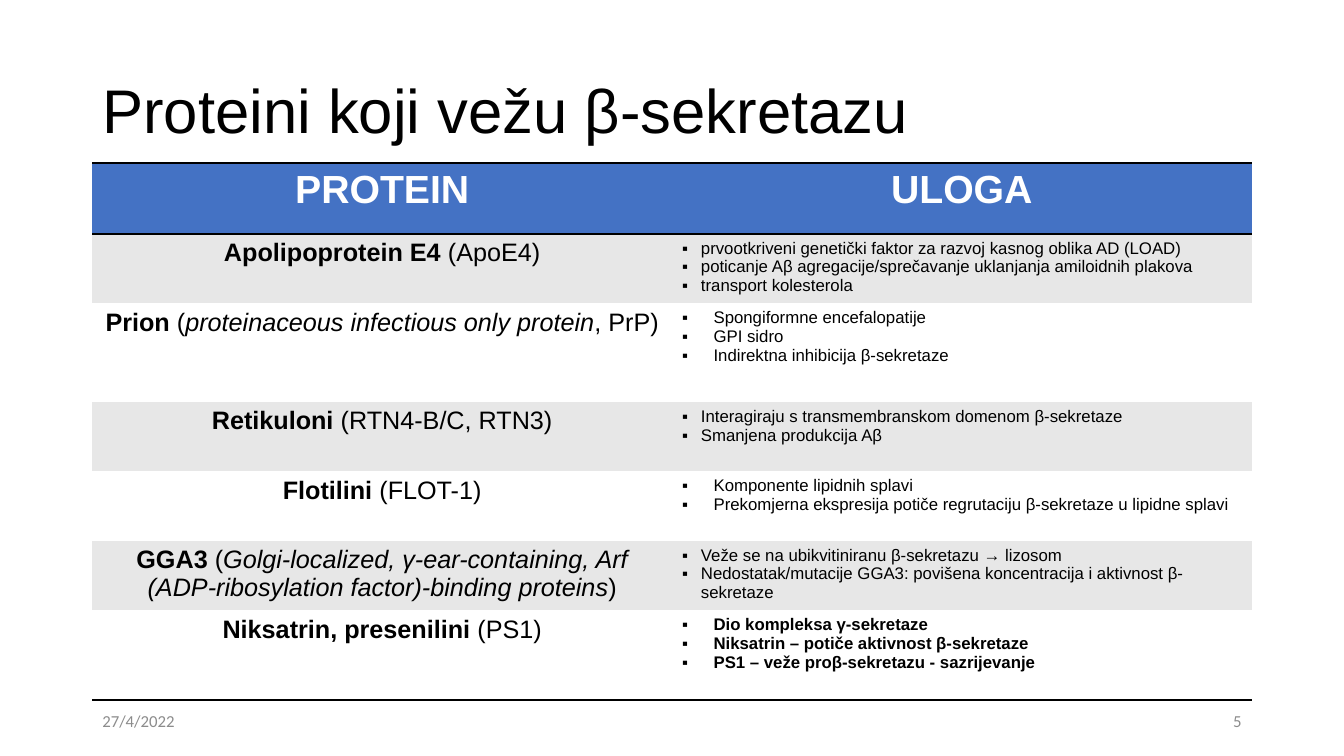
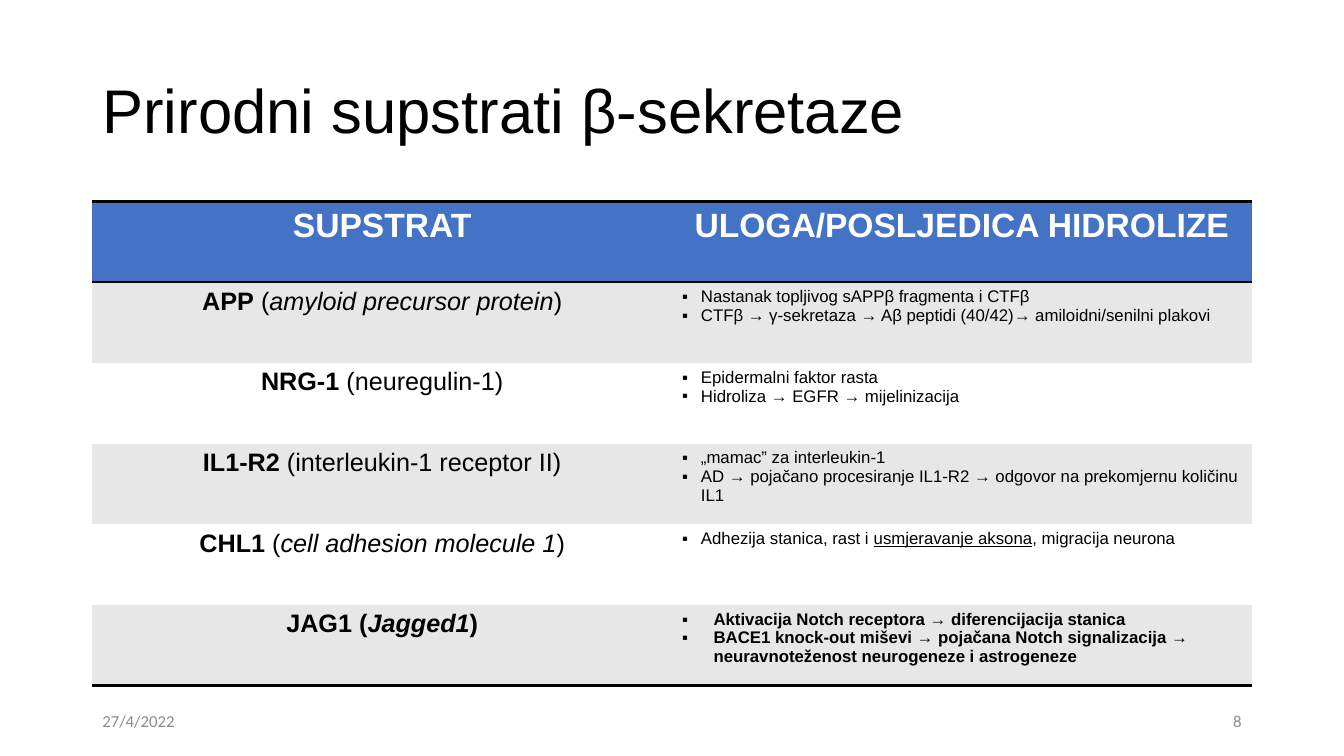
from dataclasses import dataclass
from typing import NamedTuple

from lxml import etree
from pptx import Presentation
from pptx import util as u
from pptx.dml import color
from pptx.enum import text
from pptx.oxml import ns

SLIDE_WIDTH, SLIDE_HEIGHT = 960, 540
MARGIN, CONTENT_WIDTH = 66, 828
TITLE_TOP, TITLE_HEIGHT = 28.8, 104.4
FOOTER_TOP, FOOTER_WIDTH, FOOTER_HEIGHT = 500.4, 216, 28.8
BLACK, WHITE, BLUE, BAND, GREY = "000000", "FFFFFF", "4472C4", "E7E7E7", "8C8C8C"
NARROW, WIDE = 13.5, 22.5
RULE_WIDTH = 2
DATE = "27/4/2022"
LEFT, CENTER, RIGHT = text.PP_ALIGN.LEFT, text.PP_ALIGN.CENTER, text.PP_ALIGN.RIGHT


class Span(NamedTuple):
    text: str
    bold: bool = False
    italic: bool = False
    underline: bool = False


Line = tuple[Span, ...]


@dataclass(frozen=True)
class Row:
    name: Line
    notes: tuple[Line, ...]
    height: float
    indent: float = NARROW


@dataclass(frozen=True)
class TablePage:
    title: str
    number: str
    top: float
    header: tuple[str, str]
    header_size: float
    header_height: float
    rows: tuple[Row, ...]


def strong(words: str) -> Span:
    return Span(words, bold=True)


def slanted(words: str) -> Span:
    return Span(words, italic=True)


def lines(*sentences: str, bold: bool = False) -> tuple[Line, ...]:
    return tuple((Span(sentence, bold),) for sentence in sentences)


PAGES = (
    TablePage(
        "Proteini koji vežu β-sekretazu", "5", 116.6, ("PROTEIN", "ULOGA"), 28, 50.4,
        (
            Row((strong("Apolipoprotein E4 "), Span("(ApoE4)")),
                lines("prvootkriveni genetički faktor za razvoj kasnog oblika AD (LOAD)",
                      "poticanje Aβ agregacije/sprečavanje uklanjanja amiloidnih plakova",
                      "transport kolesterola"), 49.6),
            Row((strong("Prion "), Span("("), slanted("proteinaceous infectious only protein"),
                 Span(", PrP)")),
                lines("Spongiformne encefalopatije", "GPI sidro",
                      "Indirektna inhibicija β-sekretaze"), 70.6, WIDE),
            Row((strong("Retikuloni "), Span("(RTN4-B/C, RTN3)")),
                lines("Interagiraju s transmembranskom domenom β-sekretaze",
                      "Smanjena produkcija Aβ"), 49.6),
            Row((strong("Flotilini "), Span("(FLOT-1)")),
                lines("Komponente lipidnih splavi",
                      "Prekomjerna ekspresija potiče regrutaciju β-sekretaze u lipidne splavi"),
                49.6, WIDE),
            Row((strong("GGA3 "), Span("("),
                 slanted("Golgi-localized, γ-ear-containing, Arf "
                         "(ADP-ribosylation factor)-binding proteins"), Span(")")),
                lines("Veže se na ubikvitiniranu β-sekretazu → lizosom",
                      "Nedostatak/mutacije GGA3: povišena koncentracija i aktivnost β-sekretaze"),
                49.6),
            Row((strong("Niksatrin, presenilini "), Span("(PS1)")),
                lines("Dio kompleksa γ-sekretaze", "Niksatrin – potiče aktivnost β-sekretaze",
                      "PS1 – veže proβ-sekretazu - sazrijevanje", bold=True), 64, WIDE),
        ),
    ),
    TablePage(
        "Prirodni supstrati β-sekretaze", "8", 144,
        ("SUPSTRAT", "ULOGA/POSLJEDICA HIDROLIZE"), 24, 57.6,
        (
            Row((strong("APP"), Span(" ("), slanted("amyloid precursor protein"), Span(")")),
                lines("Nastanak topljivog sAPPβ fragmenta i CTFβ",
                      "CTFβ → γ-sekretaza → Aβ peptidi (40/42)→ amiloidni/senilni plakovi"), 57.6),
            Row((strong("NRG-1"), Span(" (neuregulin-1)")),
                lines("Epidermalni faktor rasta", "Hidroliza → EGFR → mijelinizacija"), 57.6),
            Row((strong("IL1-R2"), Span(" (interleukin-1 receptor II)")),
                lines("„mamac” za interleukin-1",
                      "AD → pojačano procesiranje IL1-R2 → odgovor na prekomjernu količinu IL1"),
                57.6),
            Row((strong("CHL1"), Span(" ("), slanted("cell adhesion molecule 1"), Span(")")),
                ((Span("Adhezija stanica, rast i "), Span("usmjeravanje aksona", underline=True),
                  Span(", migracija neurona")),), 57.6),
            Row((strong("JAG1"), strong(" ("), Span("Jagged1", bold=True, italic=True),
                 strong(")")),
                lines("Aktivacija Notch receptora → diferencijacija stanica",
                      "BACE1 knock-out miševi → pojačana Notch signalizacija → "
                      "neuravnoteženost neurogeneze i astrogeneze", bold=True), 57.6, WIDE),
        ),
    ),
)


def rgb(value: str) -> color.RGBColor:
    return color.RGBColor.from_string(value)


def set_font(font, name: str, size: float, ink: str) -> None:
    font.name = name
    font.size = u.Pt(size)
    font.color.rgb = rgb(ink)


def add_bullet(para, indent: float) -> None:
    properties = para._p.get_or_add_pPr()
    properties.set("marL", str(u.Pt(indent)))
    properties.set("indent", str(-u.Pt(indent)))
    etree.SubElement(properties, ns.qn("a:buFont"), typeface="Arial")
    etree.SubElement(properties, ns.qn("a:buChar"), char="▪")


def write_lines(frame, content: tuple[Line, ...], size: float, ink: str = BLACK,
                align=LEFT, name: str = "Arial", indent: float = 0) -> None:
    for index, line in enumerate(content):
        para = frame.add_paragraph() if index else frame.paragraphs[0]
        para.alignment = align
        if indent:
            add_bullet(para, indent)
        set_font(para.font, name, size, ink)
        for span in line:
            run = para.add_run()
            run.text = span.text
            run.font.bold = span.bold
            run.font.italic = span.italic
            run.font.underline = span.underline


def style_cell(cell, fill: str, ruled: str) -> None:
    properties = cell._tc.get_or_add_tcPr()
    for side in "LRTB":
        border = etree.SubElement(properties, ns.qn(f"a:ln{side}"))
        if side in ruled:
            border.set("w", str(u.Pt(RULE_WIDTH)))
            solid = etree.SubElement(border, ns.qn("a:solidFill"))
            etree.SubElement(solid, ns.qn("a:srgbClr"), val=BLACK)
        else:
            border.set("w", "0")
            etree.SubElement(border, ns.qn("a:noFill"))
    cell.fill.solid()
    cell.fill.fore_color.rgb = rgb(fill)


def add_title(page, title: str) -> None:
    box = page.shapes.title
    box.left, box.top = u.Pt(MARGIN), u.Pt(TITLE_TOP)
    box.width, box.height = u.Pt(CONTENT_WIDTH), u.Pt(TITLE_HEIGHT)
    frame = box.text_frame
    frame.auto_size = text.MSO_AUTO_SIZE.NONE
    frame.vertical_anchor = text.MSO_ANCHOR.MIDDLE
    write_lines(frame, lines(title), 44)
    frame.paragraphs[0].line_spacing = 0.9


def add_footer(page, words: str, left: float, align) -> None:
    box = page.shapes.add_textbox(u.Pt(left), u.Pt(FOOTER_TOP),
                                  u.Pt(FOOTER_WIDTH), u.Pt(FOOTER_HEIGHT))
    frame = box.text_frame
    frame.word_wrap = True
    frame.vertical_anchor = text.MSO_ANCHOR.MIDDLE
    write_lines(frame, lines(words), 12, GREY, align, "Calibri")


def add_protein_table(page, content: TablePage) -> None:
    heights = [content.header_height, *(row.height for row in content.rows)]
    table = page.shapes.add_table(len(heights), 2, u.Pt(MARGIN), u.Pt(content.top),
                                  u.Pt(CONTENT_WIDTH), u.Pt(sum(heights))).table
    for table_row, height in zip(table.rows, heights):
        table_row.height = u.Pt(height)
    for column, heading in enumerate(content.header):
        cell = table.cell(0, column)
        style_cell(cell, BLUE, "TB")
        write_lines(cell.text_frame, lines(heading, bold=True),
                    content.header_size, WHITE, CENTER)
    for index, row in enumerate(content.rows, 1):
        name_cell, notes_cell = table.cell(index, 0), table.cell(index, 1)
        ruled = ("T" if index == 1 else "") + ("B" if index == len(content.rows) else "")
        for cell in (name_cell, notes_cell):
            style_cell(cell, BAND if index % 2 else WHITE, ruled)
        write_lines(name_cell.text_frame, (row.name,), 18, align=CENTER)
        write_lines(notes_cell.text_frame, row.notes, 12, indent=row.indent)


def main() -> None:
    deck = Presentation()
    deck.slide_width, deck.slide_height = u.Pt(SLIDE_WIDTH), u.Pt(SLIDE_HEIGHT)
    for content in PAGES:
        page = deck.slides.add_slide(deck.slide_layouts[5])
        add_title(page, content.title)
        add_protein_table(page, content)
        add_footer(page, DATE, MARGIN, LEFT)
        add_footer(page, content.number, MARGIN + CONTENT_WIDTH - FOOTER_WIDTH, RIGHT)
    deck.save("out.pptx")


if __name__ == "__main__":
    main()
